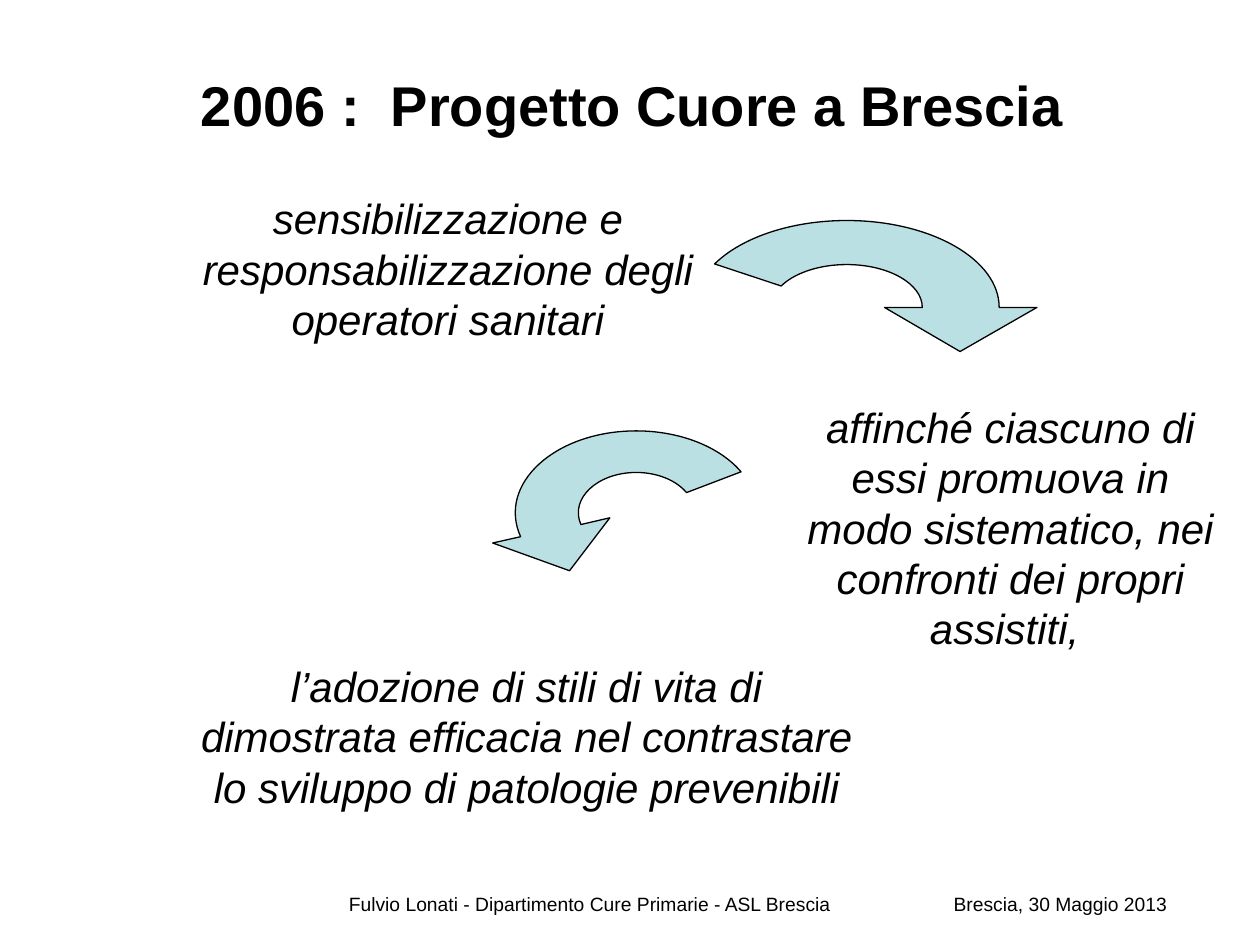
import math
from lxml import etree
from pptx import Presentation, util as u
from pptx.dml.color import RGBColor
from pptx.enum import text
from pptx.oxml.ns import qn

BLACK = RGBColor(0, 0, 0)
PALE_TEAL = RGBColor(0xBB, 0xE0, 0xE3)
FONT = "Arial"

# Content; places are left, top, width, height in inches
TITLE = ("2006 :  Progetto Cuore a Brescia", (0.77, 0.31, 8.5, 1.03))
# Each step: wording, place, bottom inset
STEPS = [
    ("sensibilizzazione e responsabilizzazione degli operatori sanitari",
     (1.43, 1.75, 4.25, 1.14), 0.43),
    ("affinché ciascuno di essi promuova in modo sistematico, nei "
     "confronti dei propri assistiti, ",
     (6.24, 2.97, 3.56, 2.43), 0.05),
    ("l’adozione di stili di vita di dimostrata efficacia nel contrastare "
     "lo sviluppo di patologie prevenibili",
     (1.43, 5.1, 5.5, 1.48), 0.05),
]
FOOTER = ("Fulvio Lonati - Dipartimento Cure Primarie - ASL Brescia",
          "Brescia, 30 Maggio 2013")
FOOTER_PLACE = (2.67, 7.03, 6.83, 0.32)
FOOTER_TAB = 4.8
# Curved arrows: elliptical band from tail angle to head angle, then the head
ARROWS = [
    dict(center=(6.72, 2.44), outer=(1.21, 0.69), inner=(0.6, 0.34),
         angles=[150, 90, 0], head=[(8.23, 2.44), (7.62, 2.79), (7.02, 2.44)]),
    dict(center=(5.05, 4.07), outer=(0.96, 0.65), inner=(0.46, 0.32),
         angles=[30, 90, 197], head=[(3.91, 4.31), (4.52, 4.53), (4.84, 4.11)]),
]


def place(shape, box):
    shape.left, shape.top, shape.width, shape.height = map(u.Inches, box)


def write(frame, words, size, align, anchor, bold=False, italic=False):
    frame.word_wrap = True
    frame.auto_size = text.MSO_AUTO_SIZE.NONE
    frame.vertical_anchor = anchor
    frame.text = words
    paragraph = frame.paragraphs[0]
    paragraph.alignment = align
    for run in paragraph.runs:
        font = run.font
        font.name, font.size = FONT, u.Pt(size)
        font.bold, font.italic = bold, italic
        font.color.rgb = BLACK


def arc_point(center, radii, angle, slope=0):
    """Point on an ellipse, moved along its tangent by slope."""
    cos, sin = math.cos(angle), math.sin(angle)
    return (center[0] + radii[0] * (cos - slope * sin),
            center[1] - radii[1] * (sin + slope * cos))


def arc_curves(center, radii, angles):
    """One cubic curve for each span between neighbouring angles."""
    turns = [math.radians(a) for a in angles]
    for start, end in zip(turns, turns[1:]):
        pull = 4 / 3 * math.tan((end - start) / 4)
        yield "cubicBezTo", [arc_point(center, radii, start, pull),
                             arc_point(center, radii, end, -pull),
                             arc_point(center, radii, end)]


def add_curved_arrow(slide, center, outer, inner, angles, head):
    # The frame is the box of the outer ellipse
    left, top = center[0] - outer[0], center[1] - outer[1]
    right, bottom = center[0] + outer[0], center[1] + outer[1]
    builder = slide.shapes.build_freeform(u.Inches(left), u.Inches(top))
    builder.add_line_segments([(u.Inches(right), u.Inches(bottom))])
    arrow = builder.convert_to_shape()

    # Outline: outer edge, head, inner edge back to the tail
    tail, tip = math.radians(angles[0]), math.radians(angles[-1])
    commands = [("moveTo", [arc_point(center, outer, tail)]),
                *arc_curves(center, outer, angles),
                *[("lnTo", [point]) for point in head],
                ("lnTo", [arc_point(center, inner, tip)]),
                *arc_curves(center, inner, angles[::-1]),
                ("close", [])]
    outline = arrow._element.find(".//" + qn("a:path"))
    for child in list(outline):
        outline.remove(child)
    for name, points in commands:
        command = etree.SubElement(outline, qn("a:" + name))
        for x, y in points:
            etree.SubElement(command, qn("a:pt"), x=str(u.Inches(x - left)),
                             y=str(u.Inches(y - top)))

    arrow.shadow.inherit = False
    arrow.fill.solid()
    arrow.fill.fore_color.rgb = PALE_TEAL
    arrow.line.color.rgb = BLACK
    arrow.line.width = u.Pt(0.75)


def main():
    prs = Presentation()
    prs.slide_width, prs.slide_height = u.Inches(10), u.Inches(7.5)
    slide = prs.slides.add_slide(prs.slide_layouts[5])
    center, middle = text.PP_ALIGN.CENTER, text.MSO_ANCHOR.MIDDLE

    # Title
    words, box = TITLE
    place(slide.shapes.title, box)
    write(slide.shapes.title.text_frame, words, 32, center, middle, bold=True)

    # Three steps of the project
    for words, box, bottom in STEPS:
        step = slide.shapes.add_textbox(*map(u.Inches, box)).text_frame
        write(step, words, 24, center, middle, italic=True)
        step.margin_bottom = u.Inches(bottom)

    # Arrows between the steps
    for arrow in ARROWS:
        add_curved_arrow(slide, **arrow)

    # Footer: author and date, parted by a tab stop
    footer = slide.shapes.add_textbox(*map(u.Inches, FOOTER_PLACE)).text_frame
    write(footer, "\t".join(FOOTER), 11, text.PP_ALIGN.LEFT,
          text.MSO_ANCHOR.TOP)
    properties = footer.paragraphs[0]._p.get_or_add_pPr()
    tabs = etree.SubElement(properties, qn("a:tabLst"))
    etree.SubElement(tabs, qn("a:tab"), pos=str(u.Inches(FOOTER_TAB)), algn="l")

    prs.save("out.pptx")


if __name__ == "__main__":
    main()
